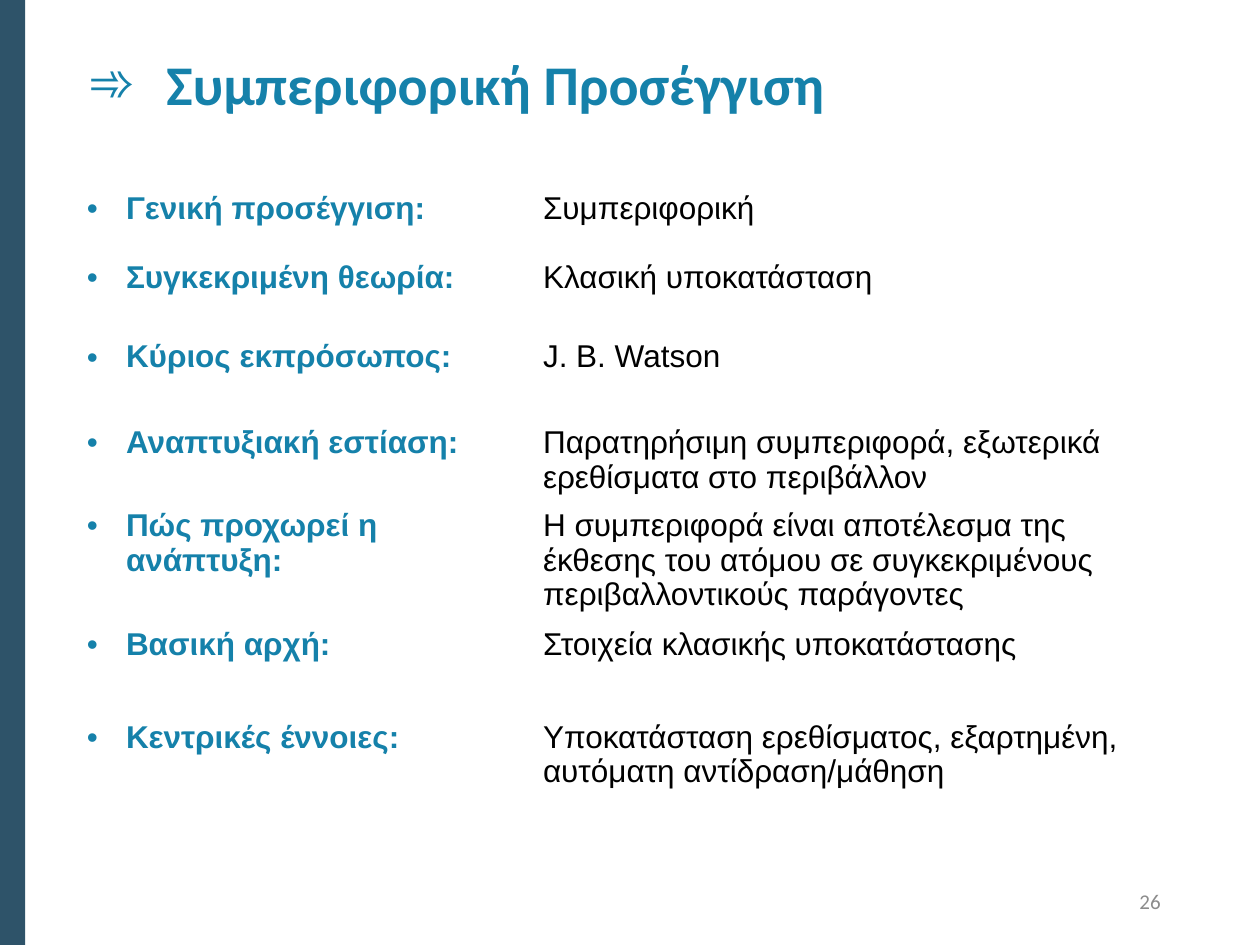
import pptx
import pptx.dml.color
import pptx.enum.shapes
import pptx.enum.text
import pptx.oxml
import pptx.oxml.ns
import pptx.util
from pptx.util import Inches

ANCHOR = pptx.enum.text.MSO_ANCHOR
ALIGN = pptx.enum.text.PP_ALIGN
BLUE = "1581AA"

ROWS = [  # label, description, row height
    ("Γενική προσέγγιση:", "Συμπεριφορική", 0.55),
    ("Συγκεκριμένη θεωρία:", "Κλασική υποκατάσταση", 0.63),
    ("Κύριος εκπρόσωπος:", "J. B. Watson", 0.68),
    ("Αναπτυξιακή εστίαση:",
     "Παρατηρήσιμη συμπεριφορά, εξωτερικά ερεθίσματα στο περιβάλλον", 0.66),
    ("Πώς προχωρεί η ανάπτυξη:",
     "Η συμπεριφορά είναι αποτέλεσμα της έκθεσης του ατόμου σε "
     "συγκεκριμένους περιβαλλοντικούς παράγοντες", 0.94),
    ("Βασική αρχή:", "Στοιχεία κλασικής υποκατάστασης", 0.74),
    ("Κεντρικές έννοιες:",
     "Υποκατάσταση ερεθίσματος, εξαρτημένη, αυτόματη αντίδραση/μάθηση", 0.82),
]


def color(value):
    return pptx.dml.color.RGBColor.from_string(value)


def add_run(para, text, font, size, hue, bold=False):
    span = para.add_run()
    span.text = text
    span.font.name = font
    span.font.size = pptx.util.Pt(size)
    span.font.bold = bold
    span.font.color.rgb = color(hue)


def add_xml(parent, xml):
    namespace = pptx.oxml.ns.nsdecls("a")
    parent.append(pptx.oxml.parse_xml(xml.replace("/>", f" {namespace}/>", 1)
                                      if xml.count("<") == 1
                                      else xml.replace(">", f" {namespace}>", 1)))


def set_bullet(para, mark, indent):
    props = para._p.get_or_add_pPr()
    props.set("marL", str(Inches(indent)))
    props.set("indent", str(-Inches(indent)))
    add_xml(props, '<a:buFont typeface="Arial"/>')
    add_xml(props, f'<a:buChar char="{mark}"/>')


def set_borders(cell, hue):
    props = cell._tc.get_or_add_tcPr()
    for offset, side in enumerate(("lnL", "lnR", "lnT", "lnB")):
        add_xml(props, f'<a:{side} w="12700"><a:solidFill><a:srgbClr val="{hue}"/>'
                       f'</a:solidFill></a:{side}>')
        props.insert(offset, props[-1])  # borders come before the fill


def add_side_band(page, left, top, width, height):
    band = page.shapes.add_shape(pptx.enum.shapes.MSO_SHAPE.RECTANGLE,
                                 left, top, width, height)
    band.shadow.inherit = False
    band.fill.solid()
    band.fill.fore_color.rgb = color("2E5369")
    band.line.fill.background()


def place_title(page, left, top, width, height):
    title = page.shapes.title
    title.left, title.top, title.width, title.height = left, top, width, height
    frame = title.text_frame
    frame.vertical_anchor = ANCHOR.TOP
    para = frame.paragraphs[0]
    para.alignment = ALIGN.LEFT
    set_bullet(para, "➾", 0.62)
    add_run(para, "Συμπεριφορική Προσέγγιση", "Calibri", 32, BLUE, True)


def add_theory_table(page, left, top, width, height):
    table = page.shapes.add_table(len(ROWS), 2, left, top, width, height).table
    table.first_row = table.horz_banding = False
    table.columns[0].width = Inches(3.62)
    table.columns[1].width = width - Inches(3.62)
    for row, (label, description, row_height) in enumerate(ROWS):
        table.rows[row].height = Inches(row_height)
        for column, text in enumerate((label, description)):
            cell = table.cell(row, column)
            cell.fill.background()
            set_borders(cell, "FFFFFF")
            para = cell.text_frame.paragraphs[0]
            para.line_spacing = 0.98
            is_label = column == 0
            if is_label:
                set_bullet(para, "•", 0.31)
            add_run(para, text, "Arial", 18, BLUE if is_label else "000000", is_label)


def add_page_number(page, left, top, width, height):
    box = page.shapes.add_textbox(left, top, width, height)
    frame = box.text_frame
    frame.word_wrap = True
    frame.vertical_anchor = ANCHOR.MIDDLE
    para = frame.paragraphs[0]
    para.alignment = ALIGN.RIGHT
    add_run(para, "26", "Calibri", 12, "8C8C8C")


def main():
    deck = pptx.Presentation()
    deck.slide_width, deck.slide_height = Inches(10), Inches(7.5)
    page = deck.slides.add_slide(deck.slide_layouts[5])
    add_side_band(page, 0, 0, Inches(0.2), deck.slide_height)
    place_title(page, Inches(0.6), Inches(0.34), Inches(8.74), Inches(0.97))
    add_theory_table(page, Inches(0.59), Inches(1.47), Inches(8.74), Inches(5.02))
    add_page_number(page, Inches(7.06), Inches(6.95), Inches(2.25), Inches(0.4))
    deck.save("out.pptx")


if __name__ == "__main__":
    main()
